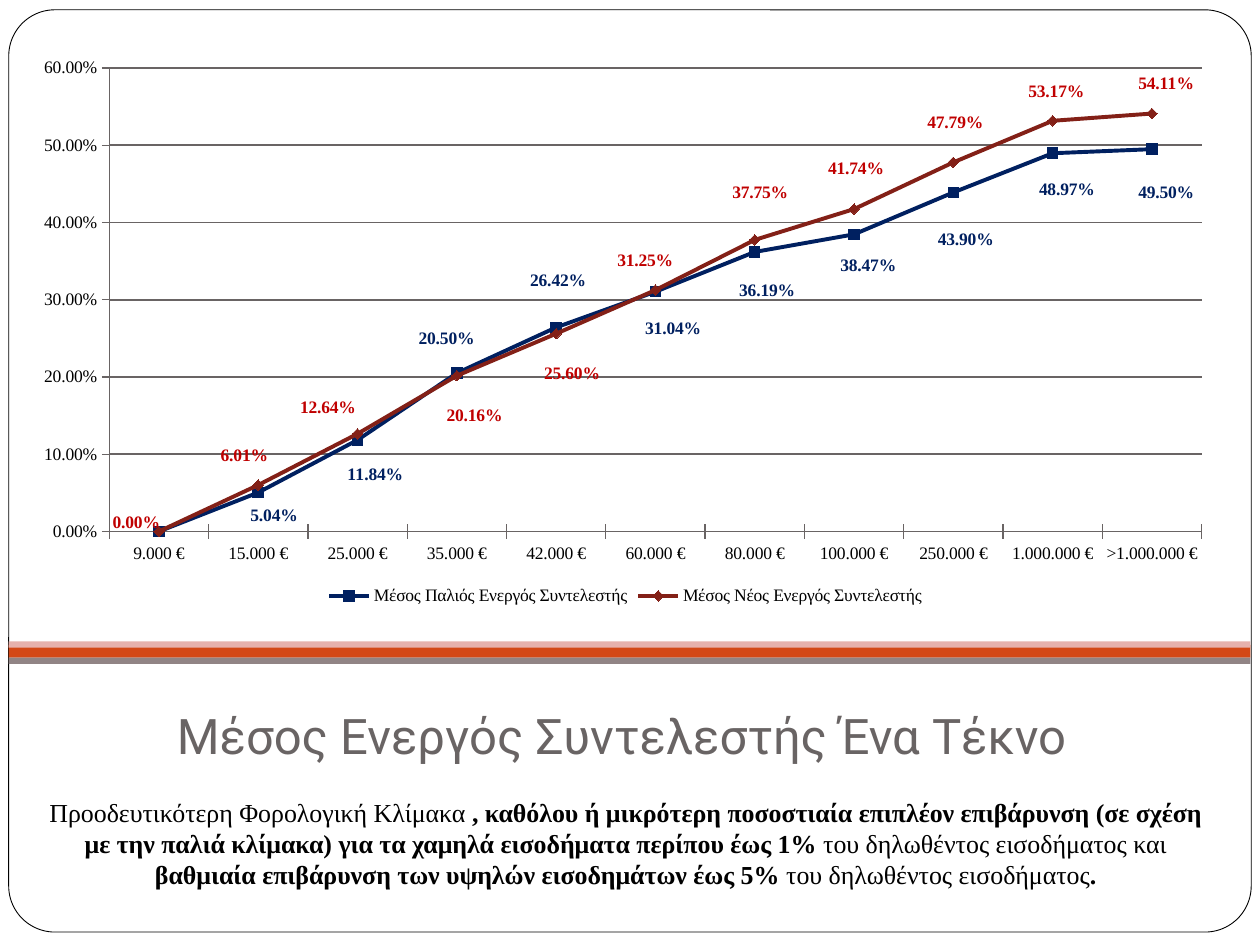
from lxml.etree import SubElement
from pptx import Presentation
from pptx.chart.data import CategoryChartData
from pptx.dml.color import RGBColor
from pptx.enum.chart import (XL_CHART_TYPE, XL_LABEL_POSITION, XL_LEGEND_POSITION,
                             XL_MARKER_STYLE, XL_TICK_MARK)
from pptx.enum.shapes import MSO_SHAPE
from pptx.enum.text import MSO_ANCHOR, PP_ALIGN
from pptx.oxml.ns import qn
from pptx.util import Pt

BLACK = RGBColor(0x00, 0x00, 0x00)
WHITE = RGBColor(0xFF, 0xFF, 0xFF)
GREY = RGBColor(0x69, 0x64, 0x64)
ORANGE = RGBColor(0xD3, 0x48, 0x17)
PINK = RGBColor(0xE6, 0xB1, 0xAC)
TAUPE = RGBColor(0x91, 0x84, 0x85)
NAVY = RGBColor(0x00, 0x20, 0x60)
BRICK = RGBColor(0x83, 0x20, 0x17)
RED = RGBColor(0xC0, 0x00, 0x00)
SERIF = "Times New Roman"

TITLE = "Μέσος Ενεργός Συντελεστής Ένα Τέκνο "
BODY = [
    ("Προοδευτικότερη Φορολογική Κλίμακα", False),
    (" , καθόλου ή μικρότερη ποσοστιαία επιπλέον επιβάρυνση (σε σχέση με την παλιά "
     "κλίμακα) για τα χαμηλά εισοδήματα περίπου έως 1% ", True),
    ("του δηλωθέντος εισοδήματος και ", False),
    ("βαθμιαία επιβάρυνση των υψηλών εισοδημάτων έως 5% ", True),
    ("του δηλωθέντος εισοδήματος", False),
    (".", True),
]
BARS = [(368.6, 7.2, ORANGE), (366.5, 3.6, PINK), (375.8, 3.6, TAUPE)]
INCOMES = ["9.000 €", "15.000 €", "25.000 €", "35.000 €", "42.000 €", "60.000 €",
           "80.000 €", "100.000 €", "250.000 €", "1.000.000 €", ">1.000.000 €"]
SERIES = [
    dict(name="Μέσος Παλιός Ενεργός Συντελεστής", line=NAVY, label=NAVY,
         marker=XL_MARKER_STYLE.SQUARE,
         rates=[0, 5.04, 11.84, 20.50, 26.42, 31.04, 36.19, 38.47, 43.90, 48.97, 49.50],
         offsets=[None, (9, 13), (10, 20), (-6, -20), (1, -27), (10, 21), (7, 22),
                  (8, 18), (7, 27), (8, 21), (8, 25)]),
    dict(name="Μέσος Νέος Ενεργός Συντελεστής", line=BRICK, label=RED,
         marker=XL_MARKER_STYLE.DIAMOND,
         rates=[0, 6.01, 12.64, 20.16, 25.60, 31.25, 37.75, 41.74, 47.79, 53.17, 54.11],
         offsets=[(-13, -5), (-8, -17), (-17, -15), (10, 23), (9, 23), (-6, -17),
                  (3, -27), (1, -23), (1, -23), (2, -17), (8, -17)]),
]
CHART_W, CHART_H = 686, 323
PLOT = dict(layoutTarget="inner", xMode="edge", yMode="edge",
            x=0.07, y=0.04, w=0.91, h=0.82)


def add_block(s, kind, left, top, width, height, color):
    sp = s.shapes.add_shape(kind, Pt(left), Pt(top), Pt(width), Pt(height))
    sp.shadow.inherit = False
    sp.fill.solid()
    sp.fill.fore_color.rgb = color
    sp.line.fill.background()
    return sp


def add_run(p, text, font, size, color, bold=False):
    r = p.add_run()
    r.text = text
    r.font.name, r.font.size, r.font.bold = font, Pt(size), bold
    r.font.color.rgb = color


def set_layout(parent, index, values):
    for old in parent.findall(qn("c:layout")):
        parent.remove(old)
    layout = SubElement(parent, qn("c:layout"))
    manual = SubElement(layout, qn("c:manualLayout"))
    for tag, value in values.items():
        SubElement(manual, qn(f"c:{tag}")).set("val", str(value))
    parent.insert(index, layout)


def add_labels(ser, color, offsets):
    for i, offset in enumerate(offsets):
        if offset:
            label = ser.points[i].data_label
            label.position = XL_LABEL_POSITION.CENTER
            label.font.name, label.font.size, label.font.bold = SERIF, Pt(10), True
            label.font.color.rgb = color
    labels = ser.data_labels
    labels.show_value = False
    for leader in labels._element.findall(qn("c:showLeaderLines")):
        leader.set("val", "0")
    moved = [offset for offset in offsets if offset]
    for label, (dx, dy) in zip(labels._element.findall(qn("c:dLbl")), moved):
        set_layout(label, 1, dict(x=round(dx / CHART_W, 4), y=round(dy / CHART_H, 4)))


def add_rate_chart(s):
    data = CategoryChartData(number_format="0.00%")
    data.categories = INCOMES
    for item in SERIES:
        data.add_series(item["name"], [round(v / 100, 4) for v in item["rates"]])
    chart = s.shapes.add_chart(XL_CHART_TYPE.LINE_MARKERS, Pt(14.4), Pt(26),
                               Pt(CHART_W), Pt(CHART_H), data).chart
    chart.has_title = False
    chart.font.name, chart.font.size = SERIF, Pt(10)
    chart.font.color.rgb = BLACK
    chart.has_legend = True
    chart.legend.position = XL_LEGEND_POSITION.BOTTOM
    chart.legend.include_in_layout = False
    rates = chart.value_axis
    rates.minimum_scale, rates.maximum_scale, rates.major_unit = 0, 0.6, 0.1
    rates.tick_labels.number_format = "0.00%"
    rates.tick_labels.number_format_is_linked = False
    rates.major_gridlines.format.line.color.rgb = GREY
    rates.major_gridlines.format.line.width = Pt(1)
    for axis in (rates, chart.category_axis):
        axis.major_tick_mark = XL_TICK_MARK.CROSS
        axis.format.line.color.rgb = GREY
        axis.format.line.width = Pt(0.75)
    plot = chart.plots[0]
    plot.vary_by_categories = False
    for ser, item in zip(plot.series, SERIES):
        ser.smooth = False
        ser.format.line.color.rgb = item["line"]
        ser.format.line.width = Pt(2.25)
        ser.marker.style, ser.marker.size = item["marker"], 6
        ser.marker.format.fill.solid()
        ser.marker.format.fill.fore_color.rgb = item["line"]
        ser.marker.format.line.color.rgb = item["line"]
        add_labels(ser, item["label"], item["offsets"])
    set_layout(chart._chartSpace.find(".//" + qn("c:plotArea")), 0, PLOT)


prs = Presentation()
prs.slide_width, prs.slide_height = Pt(720), Pt(540)
s = prs.slides.add_slide(prs.slide_layouts[5])

frame = add_block(s, MSO_SHAPE.ROUNDED_RECTANGLE, 5, 5.6, 710, 527, WHITE)
frame.adjustments[0] = 0.05
frame.line.color.rgb = BLACK
frame.line.width = Pt(0.5)
for top, height, color in BARS:
    add_block(s, MSO_SHAPE.RECTANGLE, 5, top, 709.5, height, color)

title = s.shapes.title
s.shapes._spTree.append(title._element)
title.left, title.top, title.width, title.height = Pt(70.6), Pt(394.6), Pt(576), Pt(54)
tf = title.text_frame
tf.word_wrap = True
tf.vertical_anchor = MSO_ANCHOR.MIDDLE
tf.margin_bottom = Pt(7.2)
tf.paragraphs[0].alignment = PP_ALIGN.CENTER
add_run(tf.paragraphs[0], TITLE, "Roboto", 28, GREY)

tf = s.shapes.add_textbox(Pt(20), Pt(451.4), Pt(675), Pt(71)).text_frame
tf.word_wrap = True
p = tf.paragraphs[0]
p.alignment = PP_ALIGN.CENTER
p.space_before = Pt(5.8)
for text, bold in BODY:
    add_run(p, text, SERIF, 14.8, BLACK, bold)

add_rate_chart(s)
prs.save("out.pptx")
